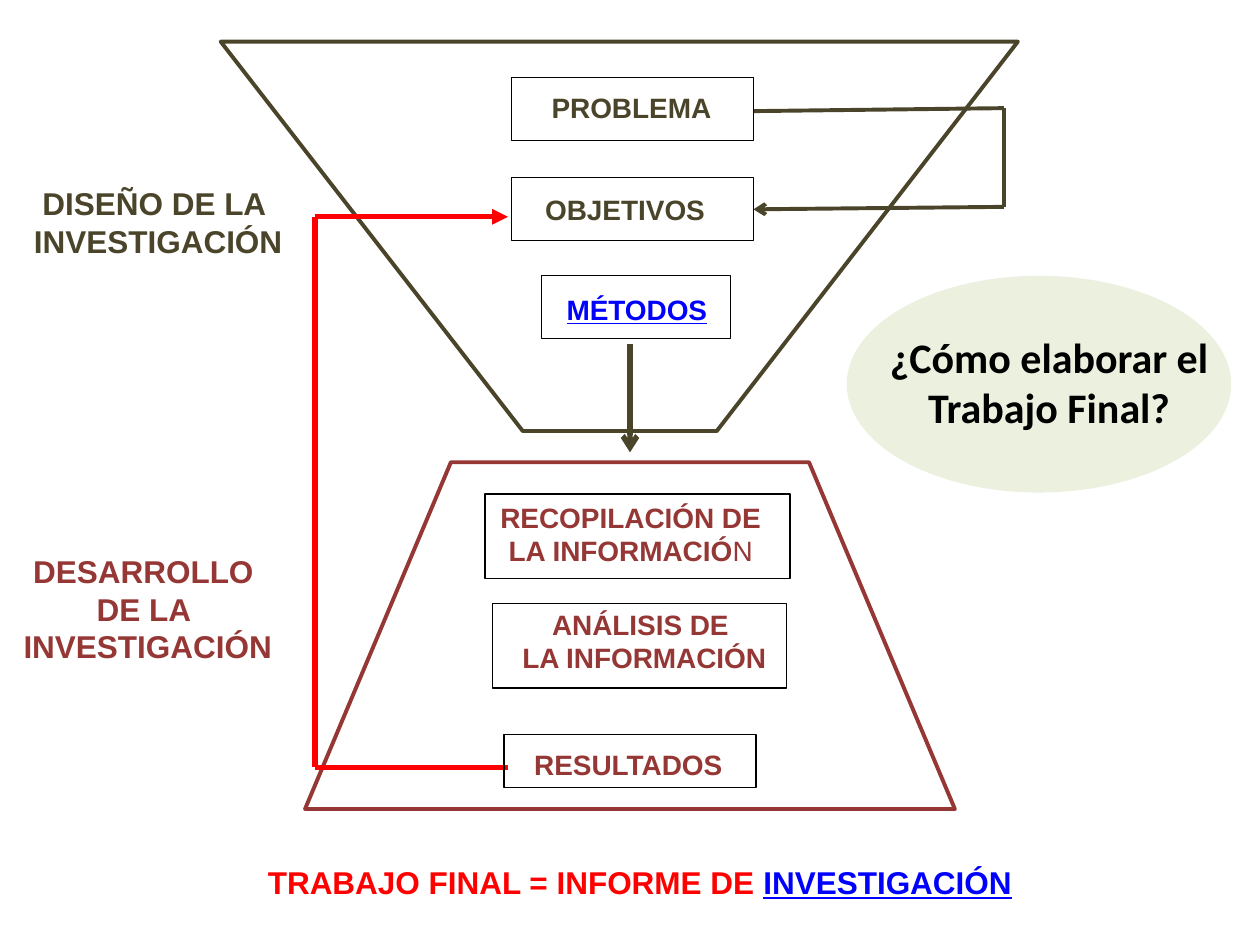
"""Build the slide on how to plan and write the final research paper."""
from lxml import etree
from pptx import Presentation
from pptx.dml.color import RGBColor
from pptx.enum.shapes import MSO_CONNECTOR, MSO_SHAPE
from pptx.enum.text import PP_ALIGN
from pptx.oxml.ns import qn
from pptx.util import Cm, Pt

STRAIGHT = MSO_CONNECTOR.STRAIGHT
OVAL, RECTANGLE = MSO_SHAPE.OVAL, MSO_SHAPE.RECTANGLE
LEFT, CENTER = PP_ALIGN.LEFT, PP_ALIGN.CENTER
OLIVE, MAROON, RED, BLUE, BLACK = "4A452A", "953735", "FF0000", "0000FF", "000000"


def color(value):
    return RGBColor.from_string(value)


def outline(shape, value, width):
    shape.shadow.inherit = False
    shape.fill.background()
    shape.line.color.rgb = color(value)
    shape.line.width = Pt(width)


deck = Presentation()
deck.slide_width, deck.slide_height = Cm(25.4), Cm(19.05)
shapes = deck.slides.add_slide(deck.slide_layouts[6]).shapes

oval = shapes.add_shape(OVAL, Cm(17.07), Cm(5.56), Cm(7.75), Cm(4.37))
oval.shadow.inherit = False
oval.fill.solid()
oval.fill.fore_color.rgb = color("EBF1DE")
oval.line.fill.background()

trapezoids = [
    (OLIVE, [(4.45, 0.84), (10.54, 8.69), (14.45, 8.69), (20.52, 0.84)]),
    (MAROON, [(6.15, 16.31), (9.09, 9.32), (16.31, 9.32), (19.25, 16.31)]),
]
for value, corners in trapezoids:
    points = [(Cm(x), Cm(y)) for x, y in corners]
    builder = shapes.build_freeform(*points[0])
    builder.add_line_segments(points[1:], close=True)
    outline(builder.convert_to_shape(), value, 2.25)

routes = [
    (RED, 3, "triangle", [(10.24, 15.47), (6.35, 15.47), (6.35, 4.37), (10.24, 4.37)]),
    (OLIVE, 2.25, "arrow", [(15.19, 2.24), (20.24, 2.18), (20.24, 4.17), (15.19, 4.22)]),
    (OLIVE, 3, "arrow", [(12.7, 6.93), (12.7, 9.12)]),
]
for value, width, arrowhead, points in routes:
    for start, end in zip(points, points[1:]):
        connector = shapes.add_connector(STRAIGHT, *map(Cm, start + end))
        connector.line.color.rgb = color(value)
        connector.line.width = Pt(width)
        properties = connector._element.spPr
        etree.SubElement(properties, qn("a:effectLst"))
    etree.SubElement(properties.find(qn("a:ln")), qn("a:tailEnd"), type=arrowhead)

frames = [
    (10.31, 1.57, 4.88, 1.27),
    (10.31, 3.58, 4.88, 1.27),
    (10.92, 5.56, 3.81, 1.27),
    (9.78, 9.96, 6.15, 1.7),
    (9.93, 12.17, 5.92, 1.7),
    (10.16, 14.81, 5.08, 1.07),
]
for frame in frames:
    outline(shapes.add_shape(RECTANGLE, *map(Cm, frame)), BLACK, 0.75)

labels = [
    ((10.85, 1.7, 3.76, 0.94), 16, OLIVE, CENTER, False, [["PROBLEMA"]]),
    ((10.74, 3.76, 3.76, 0.94), 16, OLIVE, LEFT, False, [["OBJETIVOS"]]),
    ((11.15, 5.77, 3.38, 0.94), 16, BLUE, CENTER, False, [["MÉTODOS"]]),
    ((9.73, 9.96, 5.97, 1.63), 16, MAROON, CENTER, True,
     [["RECOPILACIÓN DE LA INFORMACIÓ", "N"]]),
    ((9.32, 12.12, 7.34, 1.63), 16, MAROON, CENTER, True,
     [["ANÁLISIS DE "], ["LA INFORMACIÓN"]]),
    ((10.52, 14.94, 4.34, 0.94), 16, MAROON, LEFT, False, [["RESULTADOS"]]),
    ((0.41, 3.58, 5.56, 1.8), 18, OLIVE, CENTER, False,
     [["DISEÑO DE LA "], ["INVESTIGACIÓN"]]),
    ((0.2, 11, 5.56, 2.57), 18, MAROON, CENTER, False,
     [["DESARROLLO "], ["DE LA "], ["INVESTIGACIÓN"]]),
    ((2.59, 17.27, 20.62, 1.02), 18, RED, CENTER, True,
     [["TRABAJO FINAL = INFORME DE ", "INVESTIGACIÓN"]]),
    ((17.48, 6.55, 7.34, 2.31), 24, BLACK, CENTER, True,
     [["¿Cómo elaborar el Trabajo Final?"]]),
]
for place, size, value, alignment, wrap, lines in labels:
    box = shapes.add_textbox(*map(Cm, place))
    box.text_frame.word_wrap = wrap
    for number, pieces in enumerate(lines):
        para = box.text_frame.add_paragraph() if number else box.text_frame.paragraphs[0]
        para.alignment = alignment
        para.font.name = "Calibri" if size == 24 else "Arial"
        para.font.size = Pt(size)
        for piece in pieces:
            span = para.add_run()
            span.text = piece
            linked = value == BLUE or (value == RED and piece == "INVESTIGACIÓN")
            span.font.color.rgb = color(BLUE if linked else value)
            span.font.bold = piece != "N"
            if linked:
                span.font.underline = True

deck.save("out.pptx")
